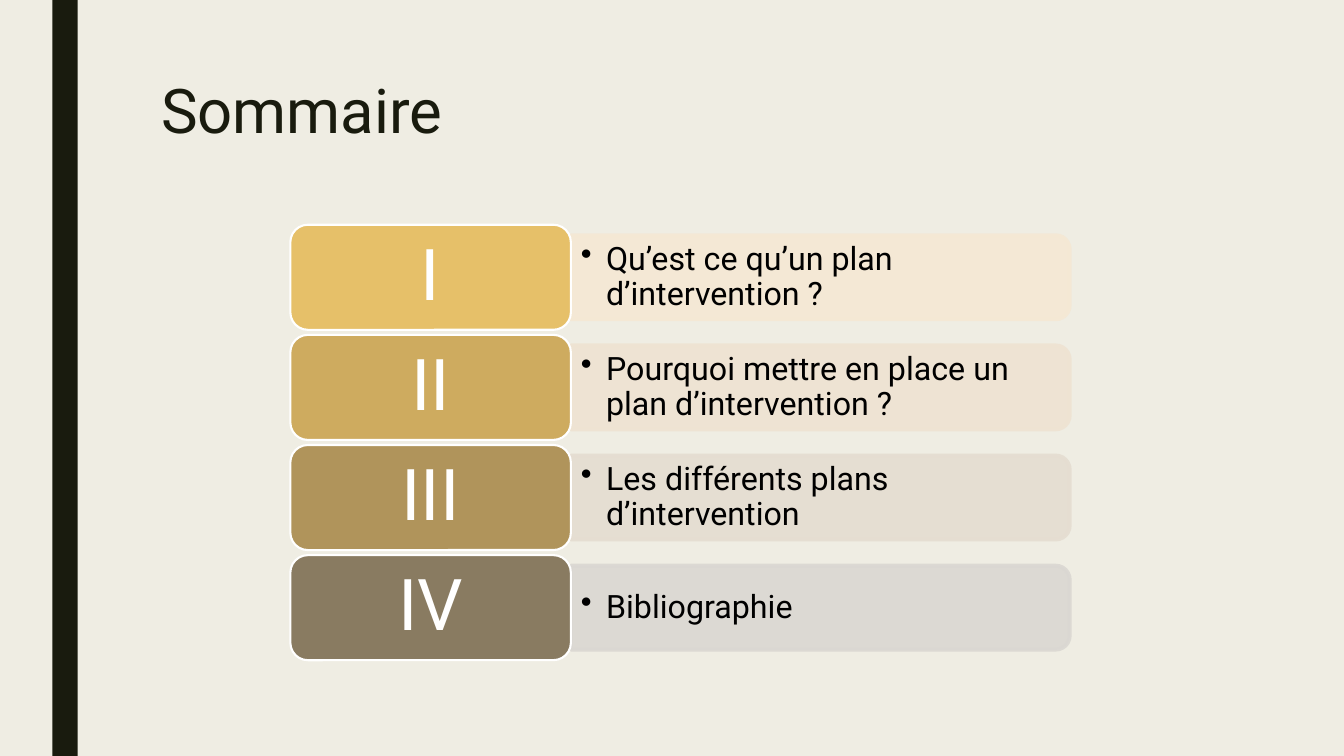
import dataclasses

import lxml.etree
import pptx
import pptx.dml.color
import pptx.enum.shapes
import pptx.enum.text
import pptx.oxml.ns
import pptx.util

Inches = pptx.util.Inches
Shape = pptx.enum.shapes.MSO_SHAPE
Anchor = pptx.enum.text.MSO_ANCHOR
Align = pptx.enum.text.PP_ALIGN


@dataclasses.dataclass(frozen=True)
class Theme:
    font: str = "Roboto"
    page: str = "EFEDE3"
    dark: str = "191B0E"
    white: str = "FFFFFF"
    black: str = "000000"
    title_size: int = 44
    numeral_size: int = 51
    topic_size: int = 23
    panel_opacity: int = 90


@dataclasses.dataclass(frozen=True)
class Box:
    left: float
    top: float
    width: float
    height: float

    def lengths(self):
        return [Inches(v) for v in (self.left, self.top, self.width, self.height)]


THEME = Theme()
PAGE = Box(0, 0, 13.33, 7.5)
ROW_GAP = 0.05
LABEL_SHARE = 0.36  # numeral column as a share of the agenda width

# Numeral, topic, numeral fill, panel fill
AGENDA = [
    ("I", "Qu’est ce qu’un plan d’intervention ?", "E6C069", "F5E8D4"),
    ("II", "Pourquoi mettre en place un plan d’intervention ?", "CEAB5F", "EEE3D2"),
    ("III", "Les différents plans d’intervention", "B0945B", "E5DDD1"),
    ("IV", "Bibliographie", "897B61", "DAD7D2"),
]


def color(value):
    return pptx.dml.color.RGBColor.from_string(value)


def write(frame, text, size, text_color, align=Align.LEFT, spacing=0.9, anchor=Anchor.MIDDLE):
    frame.word_wrap = True
    frame.auto_size = pptx.enum.text.MSO_AUTO_SIZE.NONE
    frame.vertical_anchor = anchor
    para = frame.paragraphs[0]
    para.alignment = align
    para.line_spacing = spacing
    span = para.add_run()
    span.text = text
    span.font.name = THEME.font
    span.font.size = pptx.util.Pt(size)
    span.font.color.rgb = color(text_color)
    return para


def add_bullet(para, indent):
    props = para._p.get_or_add_pPr()
    props.set("marL", str(Inches(indent)))
    props.set("indent", str(-Inches(indent)))
    bullet = lxml.etree.SubElement(props, pptx.oxml.ns.qn("a:buChar"))
    bullet.set("char", "•")


def add_block(page, kind, box, fill, line=None, line_width=0):
    block = page.shapes.add_shape(kind, *box.lengths())
    block.shadow.inherit = False
    block.fill.solid()
    block.fill.fore_color.rgb = color(fill)
    if line:
        block.line.color.rgb = color(line)
        block.line.width = pptx.util.Pt(line_width)
    else:
        block.line.fill.background()
    return block


def set_opacity(shape, percent):
    for tint in shape._element.spPr.iter(pptx.oxml.ns.qn("a:srgbClr")):
        alpha = lxml.etree.SubElement(tint, pptx.oxml.ns.qn("a:alpha"))
        alpha.set("val", str(percent * 1000))


def add_title(page, box, text):
    title = page.shapes.title
    title.left, title.top, title.width, title.height = box.lengths()
    write(title.text_frame, text, THEME.title_size, THEME.dark,
          spacing=0.89, anchor=Anchor.TOP)


def add_agenda_row(page, box, numeral, topic, label_fill, panel_fill):
    label_width = box.width * LABEL_SHARE
    panel_left = box.left + label_width
    panel_width = box.width - label_width
    panel_height = box.height * 0.8
    middle = box.top + box.height / 2

    # Panel rounded on its right side: a top-rounded shape turned a quarter
    upright = Box(panel_left + (panel_width - panel_height) / 2,
                  middle - panel_width / 2, panel_height, panel_width)
    panel = add_block(page, Shape.ROUND_2_SAME_RECTANGLE, upright,
                      panel_fill, panel_fill, 2.75)
    panel.rotation = 90
    set_opacity(panel, THEME.panel_opacity)

    # Topic
    topic_height = panel_height * 0.9
    topic_box = Box(panel_left, middle - topic_height / 2, panel_width - 0.04, topic_height)
    holder = page.shapes.add_textbox(*topic_box.lengths())
    para = write(holder.text_frame, topic, THEME.topic_size, THEME.black)
    add_bullet(para, 0.25)

    # Numeral
    label_box = Box(box.left, box.top, label_width, box.height)
    label = add_block(page, Shape.ROUNDED_RECTANGLE, label_box, label_fill, THEME.white, 1.5)
    write(label.text_frame, numeral, THEME.numeral_size, THEME.white, Align.CENTER)


def add_agenda(page, box, entries):
    pitch = (box.height + ROW_GAP) / len(entries)
    for index, entry in enumerate(entries):
        row = Box(box.left, box.top + index * pitch, box.width, pitch - ROW_GAP)
        add_agenda_row(page, row, *entry)


def add_summary_slide(deck):
    page = deck.slides.add_slide(deck.slide_layouts.get_by_name("Title Only"))
    page.background.fill.solid()
    page.background.fill.fore_color.rgb = color(THEME.page)

    # Side bar
    add_block(page, Shape.RECTANGLE, Box(0.52, 0, 0.25, PAGE.height), THEME.dark)
    add_title(page, Box(1.5, 0.75, 10.5, 1.62), "Sommaire")
    add_agenda(page, Box(2.88, 2.23, 7.73, 4.32), AGENDA)


def main():
    deck = pptx.Presentation()
    deck.slide_width = Inches(PAGE.width)
    deck.slide_height = Inches(PAGE.height)
    add_summary_slide(deck)
    deck.save("out.pptx")


if __name__ == "__main__":
    main()
